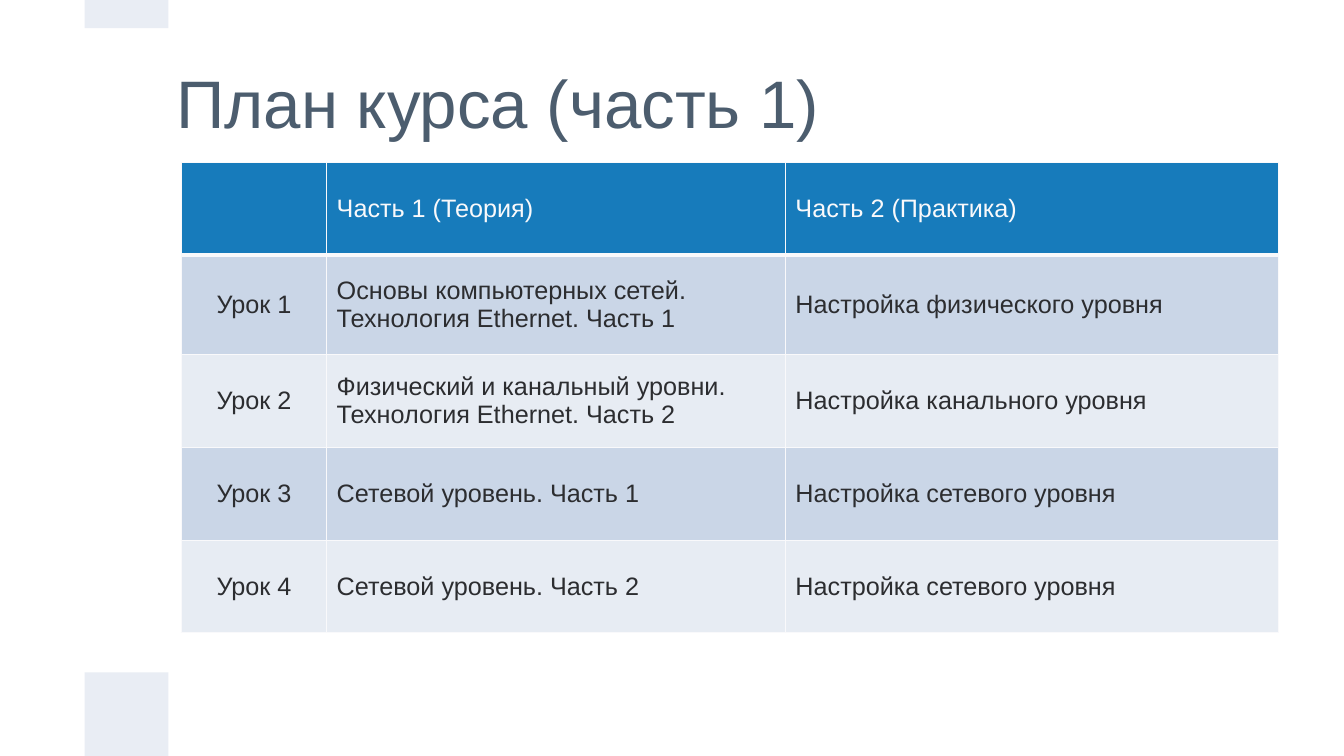
"""Builds the course plan slide with its lesson table."""
from dataclasses import dataclass

from lxml import etree
from pptx import Presentation
from pptx import util as u
from pptx.dml.color import RGBColor
from pptx.enum import shapes, text
from pptx.oxml.ns import qn


@dataclass(frozen=True)
class Theme:
    """Colours, font and type sizes of the slide."""
    font: str = "Arial"
    title_size: int = 48
    cell_size: int = 18
    title: str = "4C5D6E"
    accent: str = "E9EDF4"
    header: str = "177BBB"
    light: str = "F9F9FB"
    ink: str = "2C2D30"
    bands: tuple = ("CAD6E7", "E7ECF3")
    rule: int = 1
    header_rule: int = 3


class PlanSlide:
    """Holds the theme and the current slide, and draws its elements."""

    def __init__(self, deck, theme):
        """Add a title-only slide to the deck."""
        self.theme = theme
        self.slide = deck.slides.add_slide(deck.slide_layouts[5])

    def run(self, paragraph, wording, size, colour):
        """Add one formatted run."""
        run = paragraph.add_run()
        run.text = wording
        run.font.name = self.theme.font
        run.font.size = u.Pt(size)
        run.font.color.rgb = RGBColor.from_string(colour)

    def accent(self, left, top, width, height):
        """Draw a decorative block."""
        block = self.slide.shapes.add_shape(
            shapes.MSO_SHAPE.RECTANGLE, *map(u.Inches, (left, top, width, height)))
        block.shadow.inherit = False
        block.fill.solid()
        block.fill.fore_color.rgb = RGBColor.from_string(self.theme.accent)
        block.line.fill.background()

    def title(self, wording, left, top, width, height):
        """Place and fill the title placeholder."""
        heading = self.slide.shapes.title
        heading.left, heading.top, heading.width, heading.height = map(
            u.Inches, (left, top, width, height))
        frame = heading.text_frame
        frame.word_wrap = True
        frame.auto_size = text.MSO_AUTO_SIZE.NONE
        frame.vertical_anchor = text.MSO_ANCHOR.MIDDLE
        line = frame.paragraphs[0]
        line.alignment = text.PP_ALIGN.LEFT
        line.line_spacing = 0.9
        self.run(line, wording, self.theme.title_size, self.theme.title)

    def borders(self, cell, widths):
        """Give a cell its four borders."""
        properties = cell._tc.get_or_add_tcPr()
        for position, (side, points) in enumerate(widths.items()):
            edge = etree.Element(qn(f"a:ln{side}"), w=str(u.Pt(points)))
            fill = etree.SubElement(edge, qn("a:solidFill"))
            etree.SubElement(fill, qn("a:srgbClr"), val=self.theme.light)
            properties.insert(position, edge)

    def cell(self, cell, wording, row, column):
        """Fill and format one table cell."""
        theme = self.theme
        is_header = row == 0
        cell.fill.solid()
        cell.fill.fore_color.rgb = RGBColor.from_string(
            theme.header if is_header else theme.bands[(row - 1) % 2])
        cell.vertical_anchor = text.MSO_ANCHOR.MIDDLE
        self.borders(cell, {
            "L": theme.rule, "R": theme.rule,
            "T": theme.header_rule if row == 1 else theme.rule,
            "B": theme.header_rule if is_header else theme.rule})
        if wording:
            line = cell.text_frame.paragraphs[0]
            line.alignment = text.PP_ALIGN.LEFT if column else text.PP_ALIGN.CENTER
            self.run(line, wording, theme.cell_size, theme.light if is_header else theme.ink)

    def table(self, plan, left, top, widths, heights):
        """Draw the lesson table."""
        grid = self.slide.shapes.add_table(
            len(heights), len(widths), u.Inches(left), u.Inches(top),
            u.Inches(sum(widths)), u.Inches(sum(heights))).table
        for column, width in zip(grid.columns, widths):
            column.width = u.Inches(width)
        for row, height in zip(grid.rows, heights):
            row.height = u.Inches(height)
        for row, lesson in enumerate(plan):
            for column, wording in enumerate(lesson):
                self.cell(grid.cell(row, column), wording, row, column)


PLAN = [
    ("", "Часть 1 (Теория)", "Часть 2 (Практика)"),
    ("Урок 1", "Основы компьютерных сетей. Технология Ethernet. Часть 1",
     "Настройка физического уровня"),
    ("Урок 2", "Физический и канальный уровни. Технология Ethernet. Часть 2",
     "Настройка канального уровня"),
    ("Урок 3", "Сетевой уровень. Часть 1", "Настройка сетевого уровня"),
    ("Урок 4", "Сетевой уровень. Часть 2", "Настройка сетевого уровня"),
]


def main():
    """Build and save the deck."""
    deck = Presentation()
    deck.slide_width, deck.slide_height = u.Inches(13.33), u.Inches(7.5)
    page = PlanSlide(deck, Theme())
    for top, height in ((0, 0.28), (6.67, 0.83)):
        page.accent(0.84, top, 0.83, height)
    page.title("План курса (часть 1)", 1.65, 0.23, 10.03, 1.65)
    page.table(PLAN, 1.8, 1.61, (1.44, 4.55, 4.89), (0.92, 0.99, 0.92, 0.92, 0.92))
    deck.save("out.pptx")


if __name__ == "__main__":
    main()
